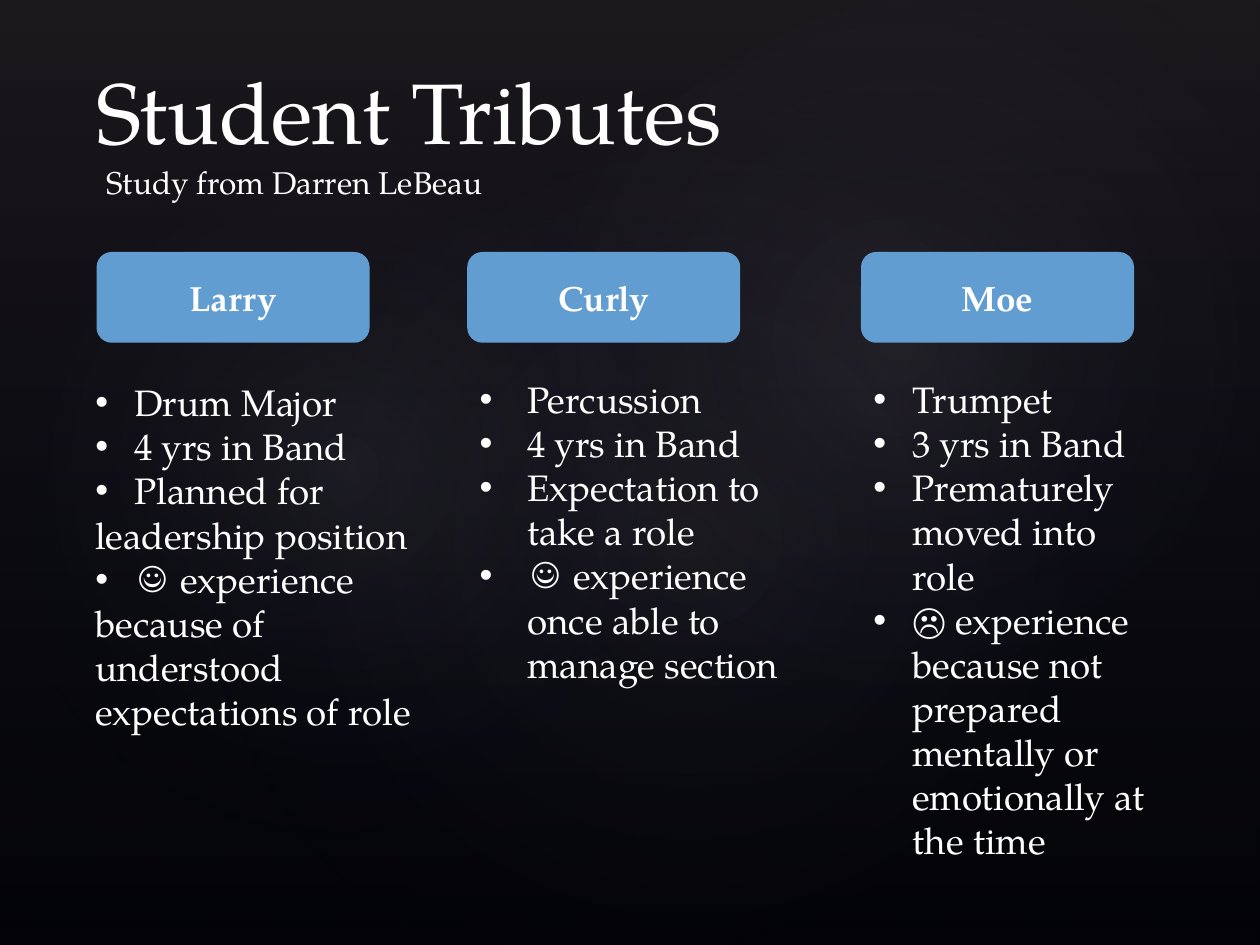
import pptx
import pptx.util
import pptx.oxml
import pptx.oxml.ns
import pptx.dml.color
import pptx.enum.shapes
import pptx.enum.text
from lxml import etree

RGB = pptx.dml.color.RGBColor
SHAPE = pptx.enum.shapes.MSO_SHAPE
ALIGN = pptx.enum.text.PP_ALIGN
ANCHOR = pptx.enum.text.MSO_ANCHOR
NS = pptx.oxml.ns.nsdecls("a")
QN = pptx.oxml.ns.qn

WHITE = RGB(0xFF, 0xFF, 0xFF)
BLACK = RGB(0, 0, 0)
BLUE = RGB(0x62, 0x9D, 0xD1)
NAVY = RGB(0x24, 0x28, 0x52)
DUSK = RGB(0x50, 0x46, 0x52)
GLOW = RGB(0xC4, 0xBC, 0xC6)
FONT = "TeX Gyre Pagella"
WIDE, HIGH = pptx.util.Inches(10), pptx.util.Inches(7.5)
COLS, ROWS = 120, 90


def grid(box):
    """Turn columns and rows into slide lengths."""
    x, y, w, h = box
    return (int(x * WIDE / COLS), int(y * HIGH / ROWS),
            int(w * WIDE / COLS), int(h * HIGH / ROWS))


def write(frame, text, size=21, bold=False, align=ALIGN.LEFT,
          anchor=ANCHOR.TOP, before=0, hang=0):
    """Fill a frame with lines; a leading bullet sign makes a list item."""
    frame.word_wrap = True
    frame.vertical_anchor = anchor
    for i, line in enumerate(text.split("\n")):
        para = frame.paragraphs[0] if i == 0 else frame.add_paragraph()
        para.alignment = align
        para.space_before = pptx.util.Pt(before)
        run = para.add_run()
        run.text = line.removeprefix("•")
        run.font.name = FONT
        run.font.size = pptx.util.Pt(size)
        run.font.bold = bold
        run.font.color.rgb = WHITE
        if line.startswith("•"):
            props = para._p.get_or_add_pPr()
            inset = pptx.util.Inches(hang)
            props.set("marL", str(inset))
            props.set("indent", str(-inset))
            etree.SubElement(props, QN("a:buFont"), typeface="Arial")
            etree.SubElement(props, QN("a:buChar"), char="•")


def label(slide, box, text, **style):
    """Add a text box."""
    write(slide.shapes.add_textbox(*grid(box)).text_frame, text, **style)


def shape(slide, kind, box):
    """Add a plain shape with no line or shadow."""
    item = slide.shapes.add_shape(kind, *grid(box))
    item.shadow.inherit = False
    item.line.fill.background()
    return item


def shade(item, stops, way):
    """Give a shape a gradient of see-through colours."""
    marks = "".join(
        f'<a:gs pos="{at * 1000}"><a:srgbClr val="{tint}">'
        f'<a:alpha val="{part * 1000}"/></a:srgbClr></a:gs>'
        for at, tint, part in stops)
    fill = pptx.oxml.parse_xml(
        f'<a:gradFill {NS} rotWithShape="1"><a:gsLst>{marks}</a:gsLst>{way}</a:gradFill>')
    item._element.spPr.find(QN("a:prstGeom")).addnext(fill)


def backdrop(slide, box):
    """Paint the dark ground and its three soft glows."""
    fill = slide.background.fill
    fill.solid()
    fill.fore_color.rgb = BLACK
    shade(shape(slide, SHAPE.RECTANGLE, box),
          [(0, DUSK, 36), (100, NAVY, 10)], '<a:lin ang="5400000" scaled="0"/>')
    ring = ('<a:path path="circle"><a:fillToRect l="50000" t="50000" '
            'r="50000" b="50000"/></a:path>')
    for spot, turn, part in [((18, 13.7, 95, 74.9), 328.7, 7),
                             ((-3.6, 15.4, 72.7, 58.8), 294.3, 8),
                             ((43, 1.6, 85, 62.4), 328.7, 8)]:
        glow = shape(slide, SHAPE.OVAL, spot)
        glow.rotation = turn
        shade(glow, [(0, GLOW, part), (58, NAVY, 0)], ring)


def header(slide, box):
    """Place the title and the line below it."""
    x, y, w, h = box
    label(slide, box, "Student Tributes", size=49, anchor=ANCHOR.BOTTOM)
    label(slide, (x + 1, y + h - 1.1, 62, 5), "Study from Darren LeBeau", size=18)


def card(slide, box, name, text, shift=(0, 0), hang=0.31):
    """Place a name plate and the list below it."""
    x, y, w, h = box
    plate = shape(slide, SHAPE.ROUNDED_RECTANGLE, (x, y, 26, 8.64))
    plate.fill.solid()
    plate.fill.fore_color.rgb = BLUE
    write(plate.text_frame, name, size=20, bold=True, align=ALIGN.CENTER,
          anchor=ANCHOR.MIDDLE, before=6)
    dx, dy = shift
    label(slide, (x + dx, y + 11.3 + dy, w, h - 11.3), text, hang=hang)


def main():
    """Build and save the deck."""
    deck = pptx.Presentation()
    deck.slide_width, deck.slide_height = WIDE, HIGH
    slide = deck.slides.add_slide(deck.slide_layouts[6])
    backdrop(slide, (0, 0, COLS, ROWS))
    header(slide, (8, 4, 99, 12))
    card(slide, (9.2, 24, 35, 46.5), "Larry",
         "•Drum Major\n•4 yrs in Band\n•Planned for\nleadership position\n"
         "•☺ experience\nbecause of understood\nexpectations of role",
         shift=(-1.3, 0.3))
    card(slide, (44.5, 24, 32.4, 42), "Curly",
         "•Percussion\n•4 yrs in Band\n•Expectation to take a role\n"
         "•☺ experience once able to manage section", hang=0.38)
    card(slide, (82, 24, 29, 59), "Moe",
         "•Trumpet\n•3 yrs in Band\n•Prematurely moved into role\n"
         "•☹ experience because not prepared mentally or emotionally at the time")
    deck.save("out.pptx")


if __name__ == "__main__":
    main()
